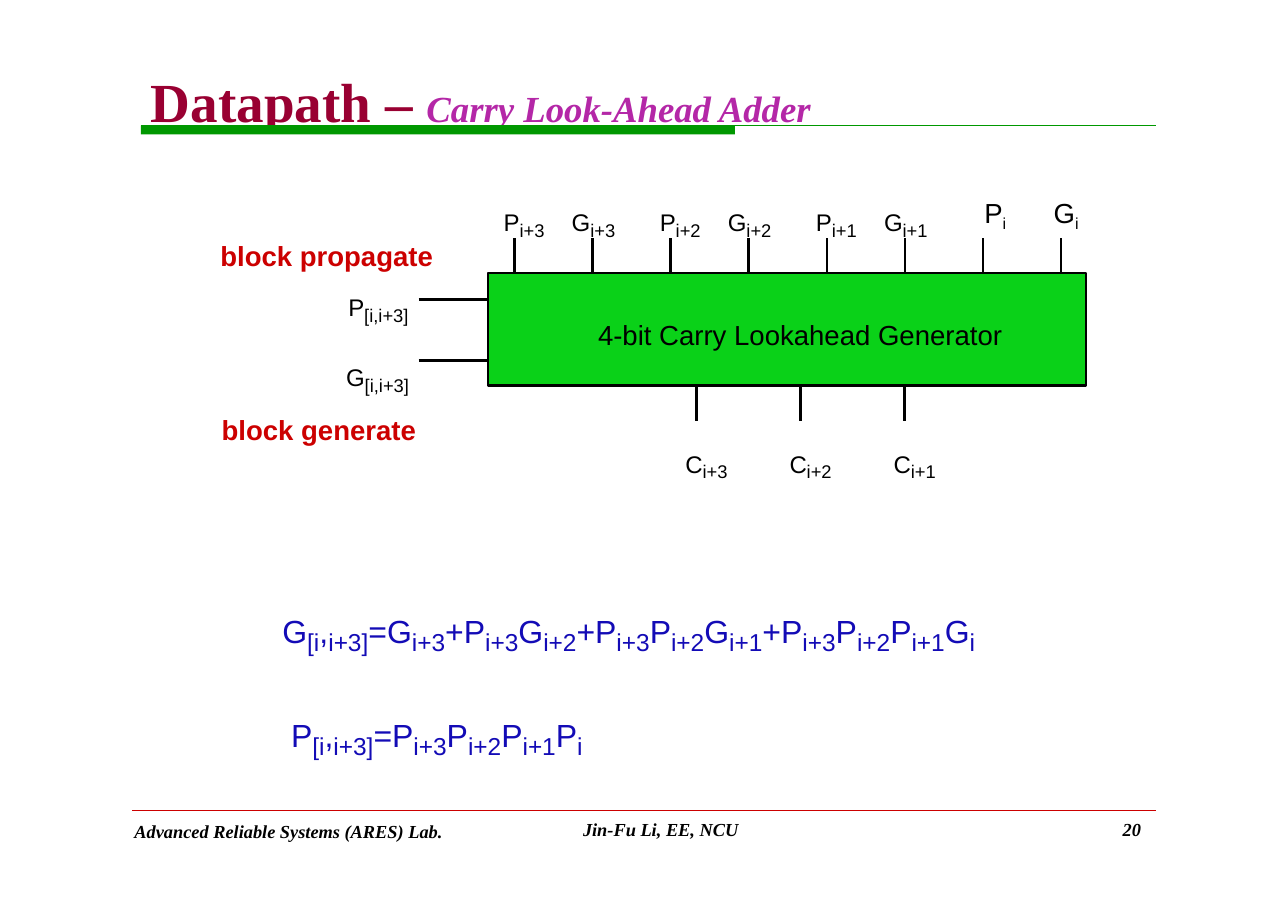
from dataclasses import dataclass

from lxml.etree import SubElement as Sub
from pptx import Presentation
from pptx.dml.color import RGBColor as Rgb
from pptx.enum.shapes import MSO_CONNECTOR as Link, MSO_SHAPE as Shape
from pptx.enum.text import MSO_ANCHOR as Anchor, PP_ALIGN as Align
from pptx.oxml.ns import qn
from pptx.util import Cm, Pt


@dataclass(frozen=True)
class Theme:
    sans: str = "Arial"
    serif: str = "Times New Roman"
    black: str = "000000"
    red: str = "CC0000"
    blue: str = "130BB6"
    wine: str = "990032"
    pink: str = "B427A7"
    rule: str = "009800"
    block: str = "0AD118"
    head: int = 36
    sub: int = 24
    body: int = 18
    foot: int = 12
    # Main size, main baseline %, index size, index baseline %
    label: tuple = (27, 14, 12, 0)
    pair: tuple = (18, 0, 18, -21)
    sums: tuple = (36, 14, 16, 0)


T = Theme()

# Text between underscores is an index.
TITLE = [("Datapath – ", T.head, T.wine, False),
         ("Carry Look-Ahead Adder", T.sub, T.pink, True)]
BLOCK = "4-bit Carry Lookahead Generator"
INPUTS = ["P_i+3_", "G_i+3_", "P_i+2_", "G_i+2_", "P_i+1_", "G_i+1_"]
LAST = "P_i\t_G_i_"
CARRIES = ["C_i+3_", "C_i+2_", "C_i+1_"]
PROP = "block propagate"
OUTPUTS = [("P_[i,i+3]_", 2.95, 0), ("G_[i,i+3]_", 2.9, 13.3)]
GEN = "block generate"
SUMS = [
    ("G_[i_,_i+3]_=G_i+3_+P_i+3_G_i+2_+P_i+3_P_i+2_G_i+1_+P_i+3_P_i+2_P_i+1_G_i_", 0.03),
    ("P_[i_,_i+3]_=P_i+3_P_i+2_P_i+1_P_i_", 0.23),
]
FOOTER = [("Advanced Reliable Systems (ARES) Lab.", 3.1, 18.9, 7.6),
          ("Jin-Fu Li, EE, NCU", 13.44, 18.87, 4),
          ("20", 25.88, 18.87, 0.8)]

# Places in centimetres
LEFT, TOP, WIDE, HIGH = 11.25, 6.3, 13.79, 2.59
BASE = TOP + HIGH
PIN = 0.81
IN_X, IN_GAP = 11.86, 1.8
OUT_X, OUT_GAP = 16.05, 2.4
SHIFT = {"P": 0.25, "G": 0.48, "C": 0.25}


def trim(frame):
    frame.margin_left = frame.margin_right = 0
    frame.margin_top = frame.margin_bottom = 0
    frame.word_wrap = True
    frame.vertical_anchor = Anchor.TOP


def box(slide, x, y, w, h):
    frame = slide.shapes.add_textbox(Cm(x), Cm(y), Cm(w), Cm(h)).text_frame
    trim(frame)
    return frame


def style(para, face=T.sans, color=T.black, size=None, bold=None, slant=None):
    font = para.font
    font.name = face
    font.color.rgb = Rgb.from_string(color)
    font.bold, font.italic = bold, slant
    if size:
        font.size = Pt(size)


def indent(para, left):
    props = para._p.get_or_add_pPr()
    props.set("marL", str(Cm(left)))
    props.set("indent", "0")


def tab(para, place):
    tabs = Sub(para._p.get_or_add_pPr(), qn("a:tabLst"))
    Sub(tabs, qn("a:tab"), pos=str(Cm(place)), algn="l")


def term(para, text, look, color=T.black):
    """Write text whose underscored parts are indices."""
    style(para, color=color)
    for n, part in enumerate(text.split("_")):
        if not part:
            continue
        size, lift = look[2:] if n % 2 else look[:2]
        run = para.add_run()
        run.text = part
        run.font.size = Pt(size)
        if lift:
            run.font._element.set("baseline", str(lift * 1000))


def plain(para, text, **look):
    para.text = text
    style(para, **look)


def line(slide, x1, y1, x2, y2, color=T.black, width=1.66):
    link = slide.shapes.add_connector(Link.STRAIGHT, Cm(x1), Cm(y1), Cm(x2), Cm(y2))
    link.line.color.rgb = Rgb.from_string(color)
    link.line.width = Pt(width)
    Sub(link._element.spPr, qn("a:effectLst"))


def rect(slide, x, y, w, h, fill, edge=None):
    shape = slide.shapes.add_shape(Shape.RECTANGLE, Cm(x), Cm(y), Cm(w), Cm(h))
    shape.shadow.inherit = False
    shape.fill.solid()
    shape.fill.fore_color.rgb = Rgb.from_string(fill)
    if edge:
        shape.line.color.rgb = Rgb.from_string(edge)
        shape.line.width = Pt(1.66)
    else:
        shape.line.fill.background()
    return shape


def header(slide):
    rect(slide, 3.25, 2.9, 13.69, 0.2, T.rule)
    line(slide, 3.25, 2.9, 26.64, 2.9, T.rule, 0.82)
    title = slide.shapes.title
    title.left, title.top, title.width, title.height = Cm(3.48), Cm(1.55), Cm(22.78), Cm(1.35)
    trim(title.text_frame)
    para = title.text_frame.paragraphs[0]
    para.alignment = Align.LEFT
    para.font.name, para.font.bold = T.serif, True
    for text, size, color, slant in TITLE:
        run = para.add_run()
        run.text = text
        run.font.size = Pt(size)
        run.font.color.rgb = Rgb.from_string(color)
        run.font.italic = slant


def adder(slide):
    frame = rect(slide, LEFT, TOP, WIDE, HIGH, T.block, T.black).text_frame
    trim(frame)
    frame.vertical_anchor = Anchor.MIDDLE
    frame.margin_left, frame.margin_top = Cm(0.6), Cm(0.22)
    para = frame.paragraphs[0]
    plain(para, BLOCK, size=T.body)
    para.alignment = Align.CENTER

    for n in range(len(INPUTS) + 2):
        x = IN_X + n * IN_GAP
        line(slide, x, TOP - PIN, x, TOP)
    for n, text in enumerate(INPUTS):
        x = IN_X + n * IN_GAP - SHIFT[text[0]]
        term(box(slide, x, 4.52, 1.2, 0.81).paragraphs[0], text, T.label)
    para = box(slide, IN_X + len(INPUTS) * IN_GAP + 0.03, 4.52, 2.3, 0.81).paragraphs[0]
    tab(para, 1.6)
    term(para, LAST, T.pair)

    for n, text in enumerate(CARRIES):
        x = OUT_X + n * OUT_GAP
        line(slide, x, BASE, x, BASE + PIN)
        term(box(slide, x - SHIFT["C"], 10.09, 1.2, 0.81).paragraphs[0], text, T.label)

    for y in (6.91, 8.31):
        line(slide, LEFT - 1.6, y, LEFT, y)
    warn = dict(size=T.body, color=T.red, bold=True)
    plain(box(slide, 5.08, 5.51, 5.1, 0.71).paragraphs[0], PROP, **warn)
    frame = box(slide, 5.08, 6.48, 4.7, 3.15)
    for n, (text, left, gap) in enumerate(OUTPUTS):
        para = frame.add_paragraph() if n else frame.paragraphs[0]
        indent(para, left)
        para.space_before = Pt(gap)
        term(para, text, T.label)
    para = frame.add_paragraph()
    indent(para, 0.03)
    para.space_before = Pt(7.9)
    plain(para, GEN, **warn)


def sums(slide):
    frame = box(slide, 6.48, 12.88, 17.2, 2.67)
    for n, (text, left) in enumerate(SUMS):
        para = frame.add_paragraph() if n else frame.paragraphs[0]
        indent(para, left)
        para.line_spacing = 1.57
        term(para, text, T.sums, T.blue)


def footer(slide):
    line(slide, 3.05, 18.69, 26.64, 18.69, T.red, 0.34)
    for text, x, y, w in FOOTER:
        plain(box(slide, x, y, w, 0.48).paragraphs[0], text,
              face=T.serif, size=T.foot, bold=True, slant=True)


def main():
    deck = Presentation()
    deck.slide_width, deck.slide_height = Cm(29.69), Cm(20.98)
    slide = deck.slides.add_slide(deck.slide_layouts[5])
    for part in (header, adder, sums, footer):
        part(slide)
    deck.save("out.pptx")


if __name__ == "__main__":
    main()
